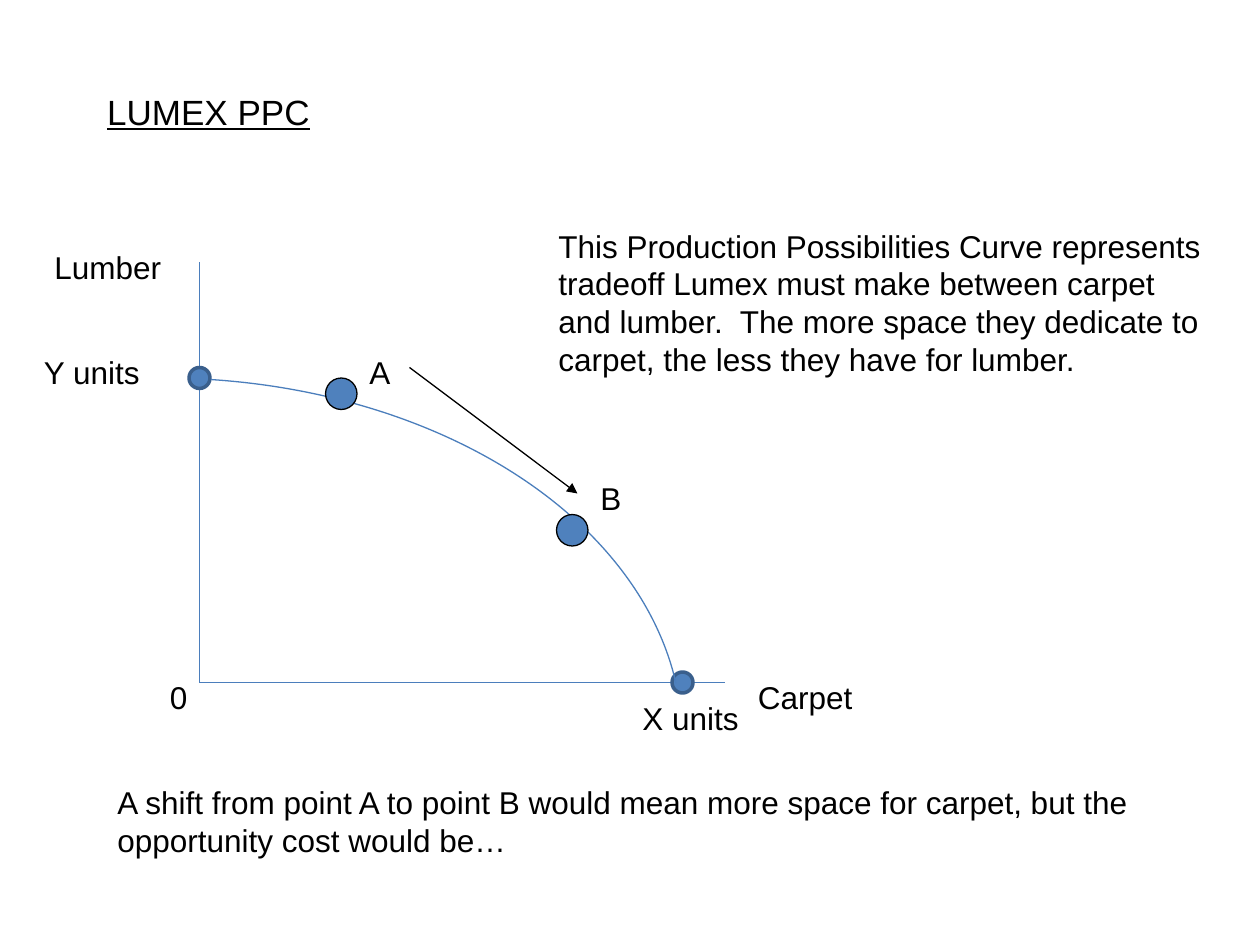
import pptx
import pptx.dml.color
import pptx.enum.shapes
import pptx.enum.text
import pptx.oxml.ns
import pptx.util
from lxml import etree

Pt = pptx.util.Pt
SHAPES = pptx.enum.shapes.MSO_SHAPE

COLORS = {"text": "000000", "fill": "4F81BD", "curve": "4B7EBC", "rim": "3A5F8C"}

# Text, left, top, width, height
TITLE = ("LUMEX PPC", 54, 48, 570, 31)
TEXTS = [
    ("Lumber", 24, 138, 174, 29),
    ("Carpet", 426, 384, 162, 29),
    ("Y units", 18, 198, 102, 29),
    ("X units", 360, 396, 102, 29),
    ("0", 90, 384, 24, 29),
    ("A", 204, 198, 24, 29),
    ("B", 336, 270, 18, 29),
    ("A shift from point A to point B would mean more space for carpet, "
     "but the opportunity cost would be…", 60, 444, 618, 50),
    ("This Production Possibilities Curve represents tradeoff Lumex must make "
     "between carpet and lumber.  The more space they dedicate to carpet, "
     "the less they have for lumber.", 312, 126, 384, 94),
]

ORIGIN = (114, 390)
AXIS_ENDS = [(114, 150), (414, 390)]
SHIFT_ARROW = ((234, 210), (330, 282))
CURVE_BOX = (-204, 216, 594, 414)
CURVE_ANGLES = (277.61, 353.64)  # degrees, clockwise from the right

# Centre x, centre y, diameter, line colour, line width
INTERCEPTS = [(114, 216, 12, "rim", 2), (390, 390, 12, "rim", 2)]
POINTS = [(195, 225, 18, "text", 0.75), (327, 303, 18, "text", 0.75)]


def rgb(name):
    return pptx.dml.color.RGBColor.from_string(COLORS[name])


def set_line(shape, color, width=0.75):
    shape.line.color.rgb = rgb(color)
    shape.line.width = Pt(width)


def write_text(shape, text, size):
    frame = shape.text_frame
    frame.text = text
    frame.word_wrap = True
    frame.auto_size = pptx.enum.text.MSO_AUTO_SIZE.NONE
    frame.vertical_anchor = pptx.enum.text.MSO_ANCHOR.TOP
    paragraph = frame.paragraphs[0]
    paragraph.alignment = pptx.enum.text.PP_ALIGN.LEFT
    paragraph.font.name = "Arial"
    paragraph.font.size = Pt(size)
    paragraph.font.color.rgb = rgb("text")
    return paragraph


def add_line(slide, start, end, color):
    connector = slide.shapes.add_connector(
        pptx.enum.shapes.MSO_CONNECTOR.STRAIGHT, *map(Pt, start + end))
    set_line(connector, color)
    etree.SubElement(connector._element.spPr, pptx.oxml.ns.qn("a:effectLst"))
    return connector


def add_curve(slide):
    curve = slide.shapes.add_shape(SHAPES.ARC, *map(Pt, CURVE_BOX))
    curve.shadow.inherit = False
    curve.fill.background()
    set_line(curve, "curve")
    for index, angle in enumerate(CURVE_ANGLES):
        # Angles are stored in 60000ths of a degree, adjustments in 100000ths
        curve.adjustments[index] = angle * 0.6


def add_dot(slide, x, y, diameter, color, width):
    corner = (x - diameter / 2, y - diameter / 2)
    dot = slide.shapes.add_shape(
        SHAPES.OVAL, *map(Pt, corner + (diameter, diameter)))
    dot.shadow.inherit = False
    dot.fill.solid()
    dot.fill.fore_color.rgb = rgb("fill")
    set_line(dot, color, width)


def main():
    presentation = pptx.Presentation()
    presentation.slide_width, presentation.slide_height = Pt(720), Pt(540)
    slide = presentation.slides.add_slide(presentation.slide_layouts[5])

    text, *box = TITLE
    title = slide.shapes.title
    title.left, title.top, title.width, title.height = map(Pt, box)
    write_text(title, text, 20).font.underline = True

    for end in AXIS_ENDS:
        add_line(slide, ORIGIN, end, "curve")
    for dot in INTERCEPTS:
        add_dot(slide, *dot)
    add_curve(slide)
    for dot in POINTS:
        add_dot(slide, *dot)

    arrow = add_line(slide, *SHIFT_ARROW, "text")
    etree.SubElement(arrow.line._get_or_add_ln(),
                     pptx.oxml.ns.qn("a:tailEnd"), type="triangle")

    for text, *box in TEXTS:
        write_text(slide.shapes.add_textbox(*map(Pt, box)), text, 18)

    presentation.save("out.pptx")


if __name__ == "__main__":
    main()
